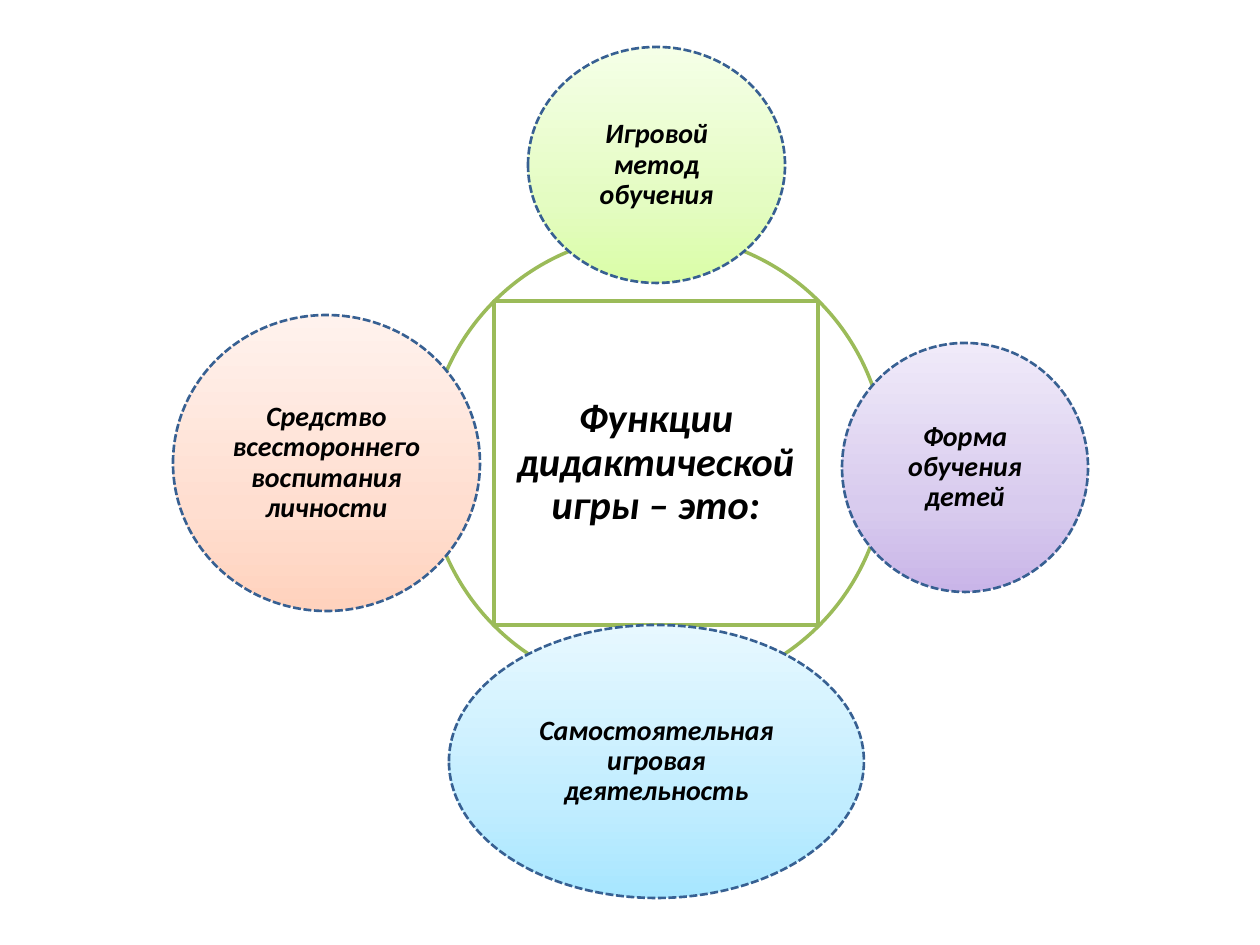
from copy import deepcopy

from pptx import Presentation
from pptx.dml.color import RGBColor
from pptx.enum.dml import MSO_LINE
from pptx.enum.shapes import MSO_SHAPE
from pptx.enum.text import MSO_ANCHOR, PP_ALIGN
from pptx.oxml.ns import qn
from pptx.util import Pt

OVAL, RECT = MSO_SHAPE.OVAL, MSO_SHAPE.RECTANGLE
DASH = MSO_LINE.SQUARE_DOT
MIDDLE, CENTER = MSO_ANCHOR.MIDDLE, PP_ALIGN.CENTER
STOPS = (0, 0.35, 1)


def px(n):
    return round(n * 914400 / 126)


def color(value):
    return RGBColor.from_string(value)


class Diagram:
    """Draws a hub and its satellites on one slide in a shared style."""

    font, ink, paper = "Calibri", "000000", "FFFFFF"
    hub_line, satellite_line = "9BBB59", "376092"

    def __init__(self, slide):
        self.slide = slide

    def shape(self, kind, box, line, width):
        s = self.slide.shapes.add_shape(kind, *map(px, box))
        s.shadow.inherit = False
        s.line.color.rgb = color(line)
        s.line.width = Pt(width)
        return s

    def text(self, s, text, size, inset):
        tf = s.text_frame
        tf.word_wrap = True
        tf.vertical_anchor = MIDDLE
        tf.margin_left = tf.margin_right = px(inset)
        tf.margin_top = tf.margin_bottom = px(inset)
        p = tf.paragraphs[0]
        p.text = text
        p.alignment = CENTER
        p.line_spacing = 0.9
        p.font.name = self.font
        p.font.size = Pt(size)
        p.font.bold = p.font.italic = True
        p.font.color.rgb = color(self.ink)

    def hub(self, kind, box):
        s = self.shape(kind, box, self.hub_line, 2)
        s.fill.solid()
        s.fill.fore_color.rgb = color(self.paper)
        return s

    def satellite(self, box, text, shades):
        s = self.shape(OVAL, box, self.satellite_line, 1.5)
        s.line.dash_style = DASH
        s.fill.gradient()
        s.fill.gradient_angle = 90
        stops = s._element.spPr.find(qn("a:gradFill")).find(qn("a:gsLst"))
        stops.append(deepcopy(stops[0]))
        for stop, position, shade in zip(s.fill.gradient_stops, STOPS, shades):
            stop.position = position
            stop.color.rgb = color(shade)
        self.text(s, text, 16, 3)


def main():
    prs = Presentation()
    prs.slide_width, prs.slide_height = px(1260), px(945)
    d = Diagram(prs.slides.add_slide(prs.slide_layouts[6]))

    d.hub(OVAL, (427, 234, 459, 459))
    square = d.hub(RECT, (494, 301, 324, 324))
    d.text(square, "Функции дидактической игры – это:", 23, 4)

    satellites = [
        ((528, 47, 257, 236), "Игровой метод обучения",
         ("DAFDA7", "E4FCC2", "F5FFE7")),
        ((842, 343, 246, 249), "Форма обучения детей",
         ("C9B5E8", "D8CBEE", "F0EAF9")),
        ((449, 625, 415, 273), "Самостоятельная игровая деятельность",
         ("A7E6FF", "C1EDFF", "E7F8FF")),
        ((173, 315, 307, 296), "Средство всестороннего воспитания личности",
         ("FFD2BD", "FFDED0", "FFF2ED")),
    ]
    for box, text, shades in satellites:
        d.satellite(box, text, shades)

    prs.save("out.pptx")


if __name__ == "__main__":
    main()
